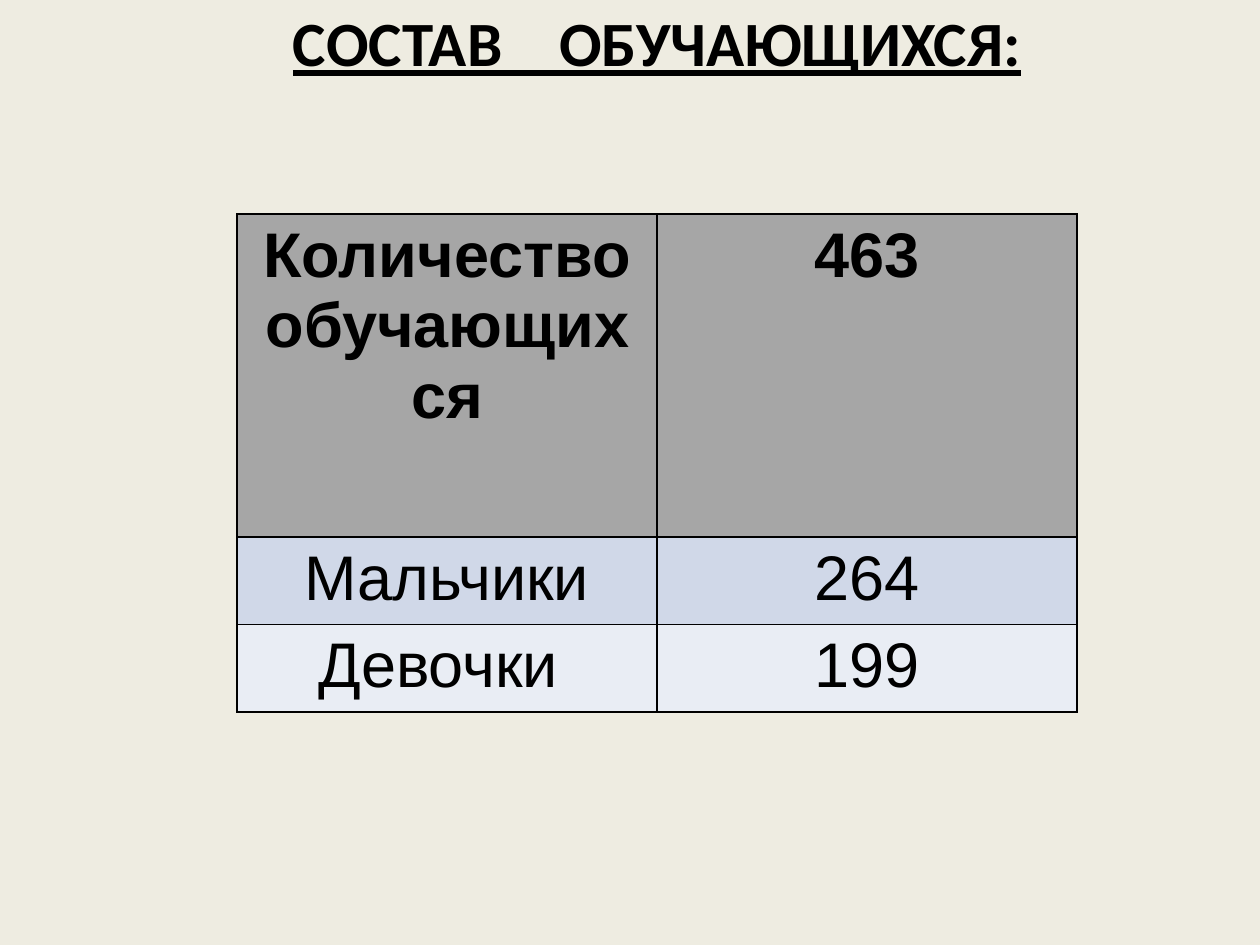
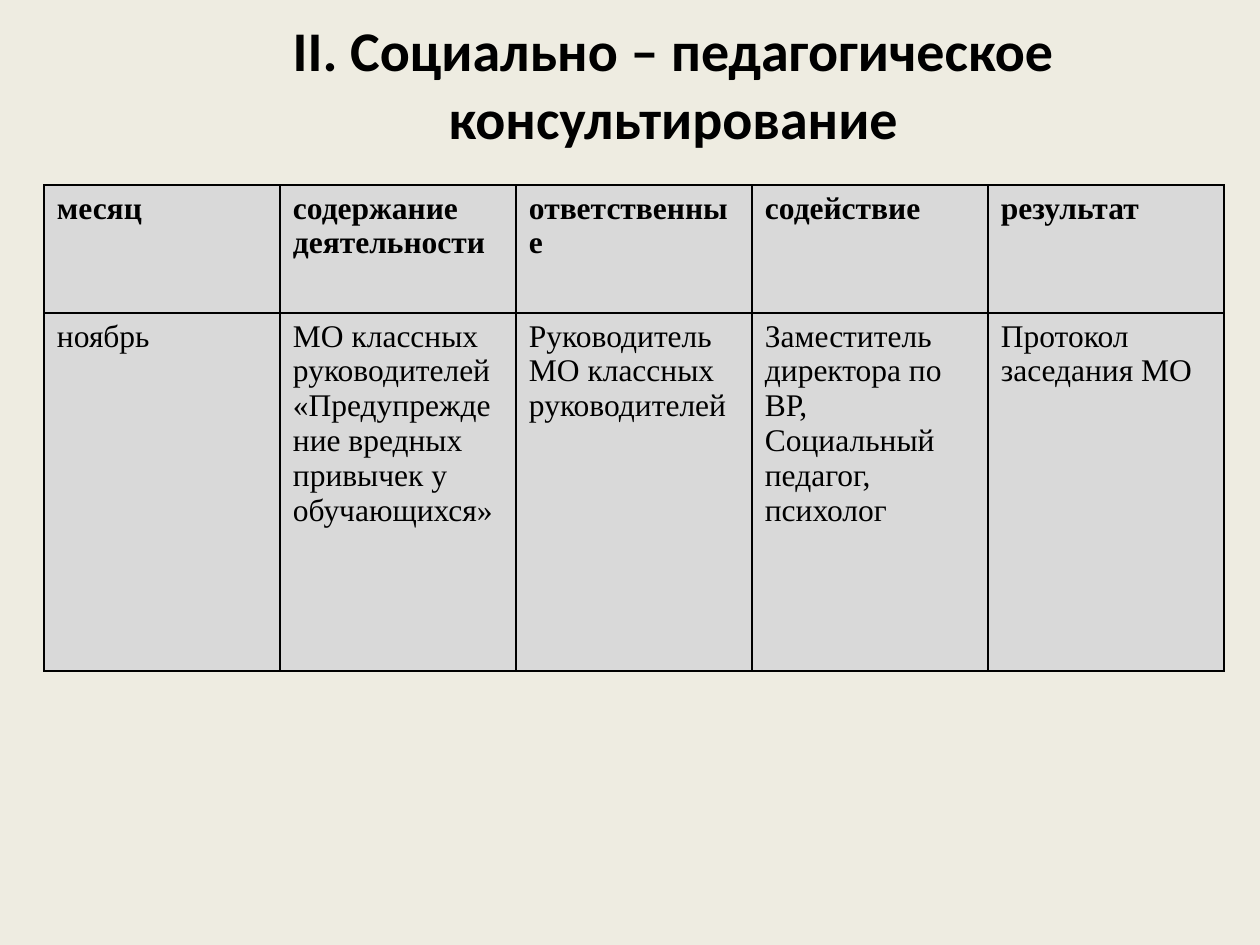
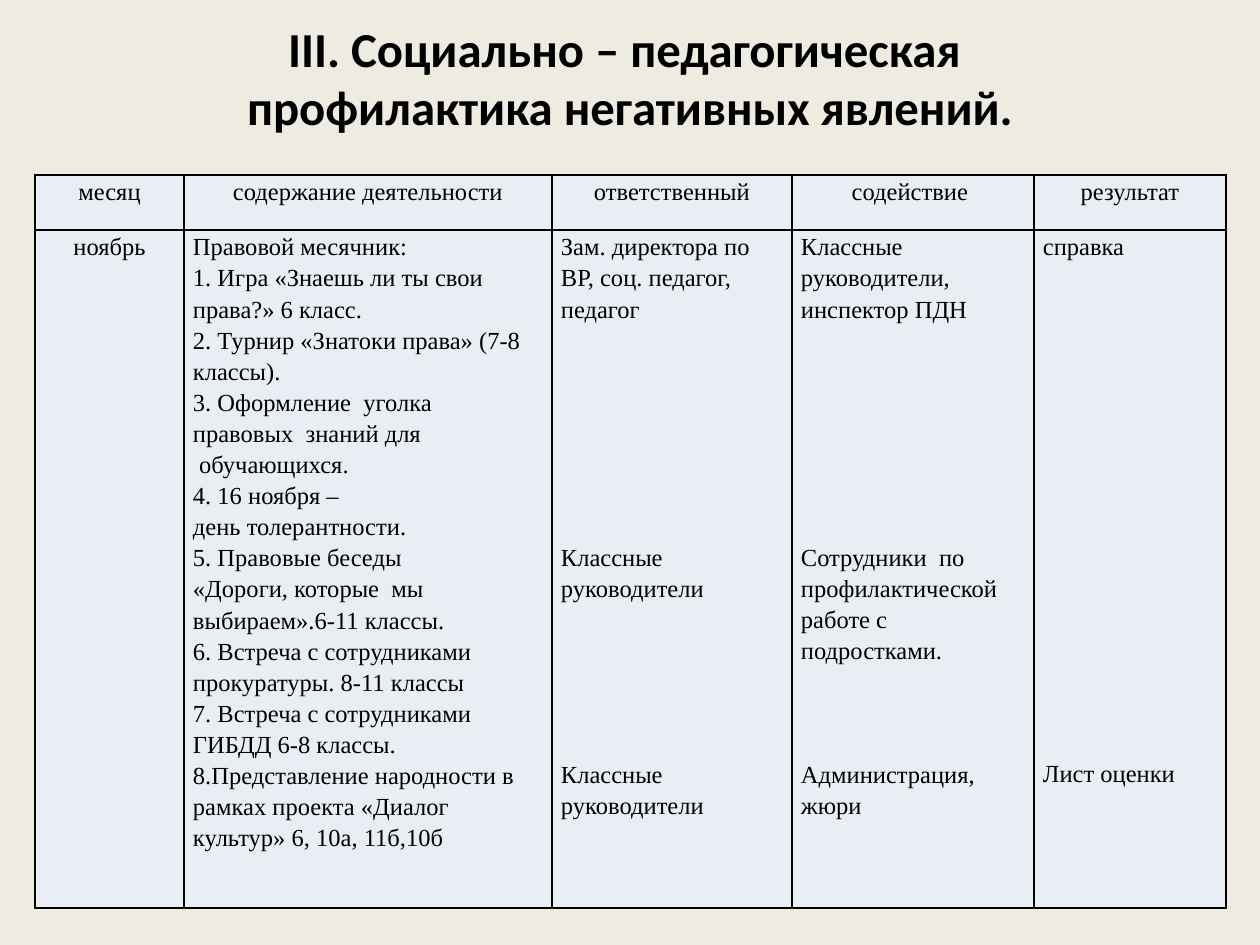
"""Builds three slides on school social work: pupil numbers and two November plans."""
from lxml import etree
from pptx import Presentation
from pptx import util as u
from pptx.dml.color import RGBColor
from pptx.enum import text
from pptx.oxml.ns import qn

CREAM = RGBColor(0xEE, 0xEC, 0xE1)
BLACK = RGBColor(0, 0, 0)
DARK_GREY = RGBColor(0xA6, 0xA6, 0xA6)
LIGHT_GREY = RGBColor(0xD9, 0xD9, 0xD9)
BLUE = RGBColor(0xD0, 0xD8, 0xE8)
PALE_BLUE = RGBColor(0xE9, 0xED, 0xF4)

LEFT, CENTER = text.PP_ALIGN.LEFT, text.PP_ALIGN.CENTER
PLAN_LINE = 31


def px(count):
    return u.Emu(round(count * 914400 / 126))


def write(frame, paragraphs, font, size, bold=False, underline=False,
          align=LEFT, spacing=None, after=0):
    """Fill a frame; a paragraph is a text, or a text and its empty lines above."""
    frame.word_wrap = True
    for index, entry in enumerate(paragraphs):
        words, lines_above = (entry, 0) if isinstance(entry, str) else entry
        paragraph = frame.paragraphs[0] if index == 0 else frame.add_paragraph()
        paragraph.text = words
        paragraph.alignment = align
        paragraph.space_before = px(lines_above * PLAN_LINE)
        paragraph.space_after = u.Pt(after)
        if spacing:
            paragraph.line_spacing = spacing
        for run in paragraph.runs:
            run.font.name = font
            run.font.size = u.Pt(size)
            run.font.bold = bold
            run.font.underline = underline
            run.font.color.rgb = BLACK


pupils = [
    [["Количество обучающихся"], ["463"]],
    [["Мальчики"], ["264"]],
    [["Девочки "], ["199"]],
]
consulting = [
    [["месяц"], ["содержание", "деятельности"], ["ответственные"],
     ["содействие"], ["результат"]],
    [["ноябрь"],
     ["МО классных руководителей «Предупреждение вредных привычек у обучающихся»"],
     ["Руководитель МО классных руководителей"],
     ["Заместитель директора по ВР,", "Социальный педагог, психолог"],
     ["Протокол заседания МО"]],
]
prevention = [
    [["месяц"], ["содержание деятельности"], ["ответственный"],
     ["содействие "], ["результат"]],
    [["ноябрь"],
     ["Правовой месячник:",
      "1. Игра «Знаешь ли ты свои права?» 6 класс.",
      "2. Турнир «Знатоки права» (7-8 классы).",
      "3. Оформление  уголка",
      "правовых  знаний для",
      " обучающихся.",
      "4. 16 ноября –",
      "день толерантности.",
      "5. Правовые беседы",
      "«Дороги, которые  мы",
      "выбираем».6-11 классы.",
      "6. Встреча с сотрудниками прокуратуры. 8-11 классы",
      "7. Встреча с сотрудниками ГИБДД 6-8 классы.",
      "8.Представление народности в рамках проекта «Диалог культур» 6, 10а, 11б,10б"],
     ["Зам. директора по ВР, соц. педагог,", "педагог",
      ("Классные руководители", 7), ("Классные руководители", 5)],
     ["Классные руководители, инспектор ПДН",
      ("Сотрудники  по профилактической работе с подростками.", 7),
      ("Администрация, жюри", 3)],
     ["справка", ("Лист оценки", 16)]],
]

pages = [
    dict(title="СОСТАВ    ОБУЧАЮЩИХСЯ:", title_box=(54, 16, 1206, 120),
         title_size=36, underline=True, title_lift=76,
         rows=pupils, corner=(237, 214), widths=[420] * 2, heights=[323, 83, 83],
         fills=[DARK_GREY, BLUE, PALE_BLUE], margins=(13, 6),
         style=dict(font="Arial", size=36, align=CENTER), bold_header=True),
    dict(title="II. Социально – педагогическое консультирование",
         title_box=(84, 37, 1179, 157), title_size=32, underline=False, title_lift=71,
         rows=consulting, corner=(44, 185), widths=[236] * 5, heights=[128, 358],
         fills=[LIGHT_GREY] * 2, margins=(13, 6),
         style=dict(font="Times New Roman", size=18), bold_header=True),
    dict(title="III. Социально – педагогическая \vпрофилактика негативных явлений.",
         title_box=(63, 38, 1134, 157), title_size=27.9, underline=False, title_lift=85,
         rows=prevention, corner=(35, 175), widths=[149, 368, 240, 242, 192],
         heights=[55, 678], fills=[PALE_BLUE] * 2, margins=(9, 0),
         style=dict(font="Times New Roman", size=14, spacing=1.15), bold_header=False),
]

deck = Presentation()
deck.slide_width, deck.slide_height = px(1260), px(945)

for page in pages:
    slide = deck.slides.add_slide(deck.slide_layouts[6])
    slide.background.fill.solid()
    slide.background.fill.fore_color.rgb = CREAM

    heading = slide.shapes.add_textbox(*map(px, page["title_box"])).text_frame
    heading.vertical_anchor = text.MSO_ANCHOR.MIDDLE
    heading.margin_bottom = px(page["title_lift"])
    write(heading, [page["title"]], "Calibri", page["title_size"], bold=True,
          underline=page["underline"], align=CENTER)

    rows, widths, heights = page["rows"], page["widths"], page["heights"]
    grid = slide.shapes.add_table(
        len(rows), len(widths), *map(px, page["corner"]),
        px(sum(widths)), px(sum(heights))).table
    for column, width in zip(grid.columns, widths):
        column.width = px(width)

    for row_index, (cells, height, fill) in enumerate(zip(rows, heights, page["fills"])):
        grid.rows[row_index].height = px(height)
        for column_index, paragraphs in enumerate(cells):
            cell = grid.cell(row_index, column_index)
            side, edge = map(px, page["margins"])
            cell.margin_left = cell.margin_right = side
            cell.margin_top = cell.margin_bottom = edge
            properties = cell._tc.get_or_add_tcPr()
            for border in ("a:lnL", "a:lnR", "a:lnT", "a:lnB"):
                line = etree.SubElement(properties, qn(border), w="12700")
                paint = etree.SubElement(line, qn("a:solidFill"))
                etree.SubElement(paint, qn("a:srgbClr"), val=str(BLACK))
            cell.fill.solid()
            cell.fill.fore_color.rgb = fill
            style = dict(page["style"], bold=page["bold_header"] and row_index == 0)
            if rows is prevention and (row_index == 0 or column_index == 0):
                style.update(align=CENTER, after=10)
            write(cell.text_frame, paragraphs, **style)

deck.save("out.pptx")
